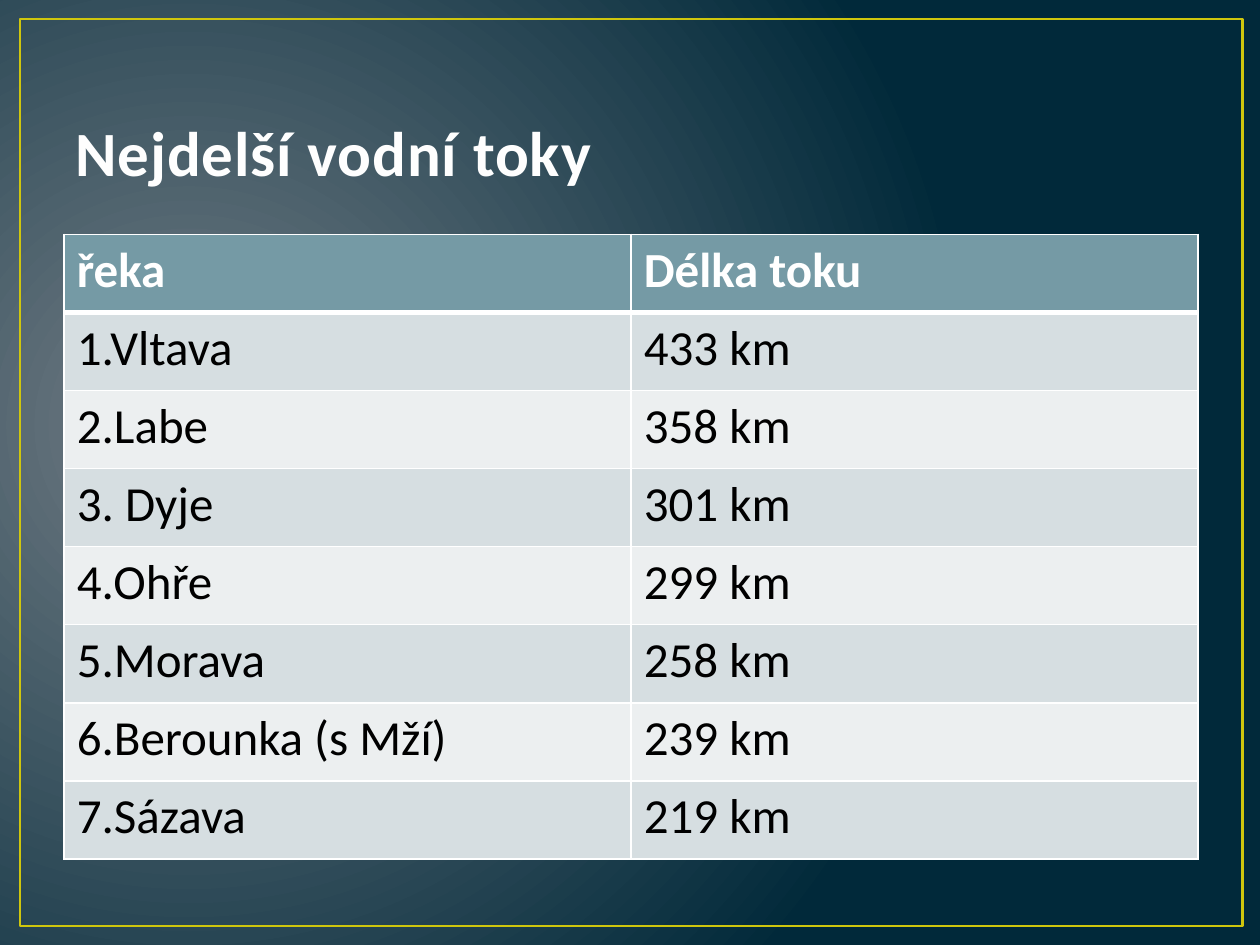
from pptx import Presentation
from pptx.dml.color import RGBColor
from pptx.enum.shapes import MSO_SHAPE
from pptx.enum.text import MSO_ANCHOR
from pptx.oxml import parse_xml
from pptx.oxml.ns import nsdecls, qn
from pptx.util import Inches, Pt

COLORS = {
    "glow": "717C84", "night": "01293A", "frame": "CFC60D",
    "title": "FEFEFE", "outline": "384F55", "white": "FFFFFF", "black": "000000",
    "header": "759AA5", "odd": "D6DEE1", "even": "ECEFF0",
}
RIVERS = [
    ("řeka", "Délka toku"),
    ("1.Vltava", "433 km"),
    ("2.Labe", "358 km"),
    ("3. Dyje", "301 km"),
    ("4.Ohře", "299 km"),
    ("5.Morava", "258 km"),
    ("6.Berounka (s Mží)", "239 km"),
    ("7.Sázava", "219 km"),
]


def format_span(span, size, color, bold):
    span.font.name = "Calibri"
    span.font.size = Pt(size)
    span.font.bold = bold
    span.font.color.rgb = RGBColor.from_string(COLORS[color])


def line_xml(tag, width, color):
    return parse_xml(
        f'<a:{tag} {nsdecls("a")} w="{Pt(width)}"><a:solidFill>'
        f'<a:srgbClr val="{COLORS[color]}"/></a:solidFill></a:{tag}>')


deck = Presentation()
deck.slide_width, deck.slide_height = Inches(10), Inches(7.5)
page = deck.slides.add_slide(deck.slide_layouts[6])

# Background: radial glow from the left
page.element.find(qn("p:cSld")).insert(0, parse_xml(
    f'<p:bg {nsdecls("p", "a")}><p:bgPr><a:gradFill rotWithShape="1"><a:gsLst>'
    f'<a:gs pos="0"><a:srgbClr val="{COLORS["glow"]}"/></a:gs>'
    f'<a:gs pos="100000"><a:srgbClr val="{COLORS["night"]}"/></a:gs></a:gsLst>'
    '<a:path path="circle"><a:fillToRect l="15000" t="50000" r="85000" b="60000"/></a:path>'
    '</a:gradFill><a:effectLst/></p:bgPr></p:bg>'))

# Frame
frame = page.shapes.add_shape(
    MSO_SHAPE.RECTANGLE, Inches(0.16), Inches(0.15), Inches(9.7), Inches(7.2))
frame.shadow.inherit = False
frame.fill.background()
frame.line.color.rgb = RGBColor.from_string(COLORS["frame"])
frame.line.width = Pt(1.5)

# Title
title = page.shapes.add_textbox(Inches(0.5), Inches(0.3), Inches(9), Inches(1.25))
title.text_frame.word_wrap = True
title.text_frame.vertical_anchor = MSO_ANCHOR.BOTTOM
title.text_frame.text = "Nejdelší vodní toky"
span = title.text_frame.paragraphs[0].runs[0]
format_span(span, 36, "title", True)
properties = span.font._element if hasattr(span.font, "_element") else span._r.get_or_add_rPr()
properties.set("spc", "50")
properties.insert(0, line_xml("ln", 1.05, "outline"))

# River table
table = page.shapes.add_table(
    len(RIVERS), 2, Inches(0.51), Inches(1.86), Inches(9), Inches(4.96)).table
for row_index, river in enumerate(RIVERS):
    table.rows[row_index].height = Inches(0.62)
    is_header = row_index == 0
    fill = "header" if is_header else ("odd" if row_index % 2 else "even")
    # A thick rule separates the header from the body
    borders = {"lnL": 1, "lnR": 1,
               "lnT": 3 if row_index == 1 else 1,
               "lnB": 3 if is_header else 1}
    for column_index, words in enumerate(river):
        cell = table.cell(row_index, column_index)
        cell.text_frame.text = words
        format_span(cell.text_frame.paragraphs[0].runs[0], 28,
                    "white" if is_header else "black", is_header)
        cell.fill.solid()
        cell.fill.fore_color.rgb = RGBColor.from_string(COLORS[fill])
        cell_properties = cell._tc.get_or_add_tcPr()
        for position, (tag, width) in enumerate(borders.items()):
            cell_properties.insert(position, line_xml(tag, width, "white"))

deck.save("out.pptx")
